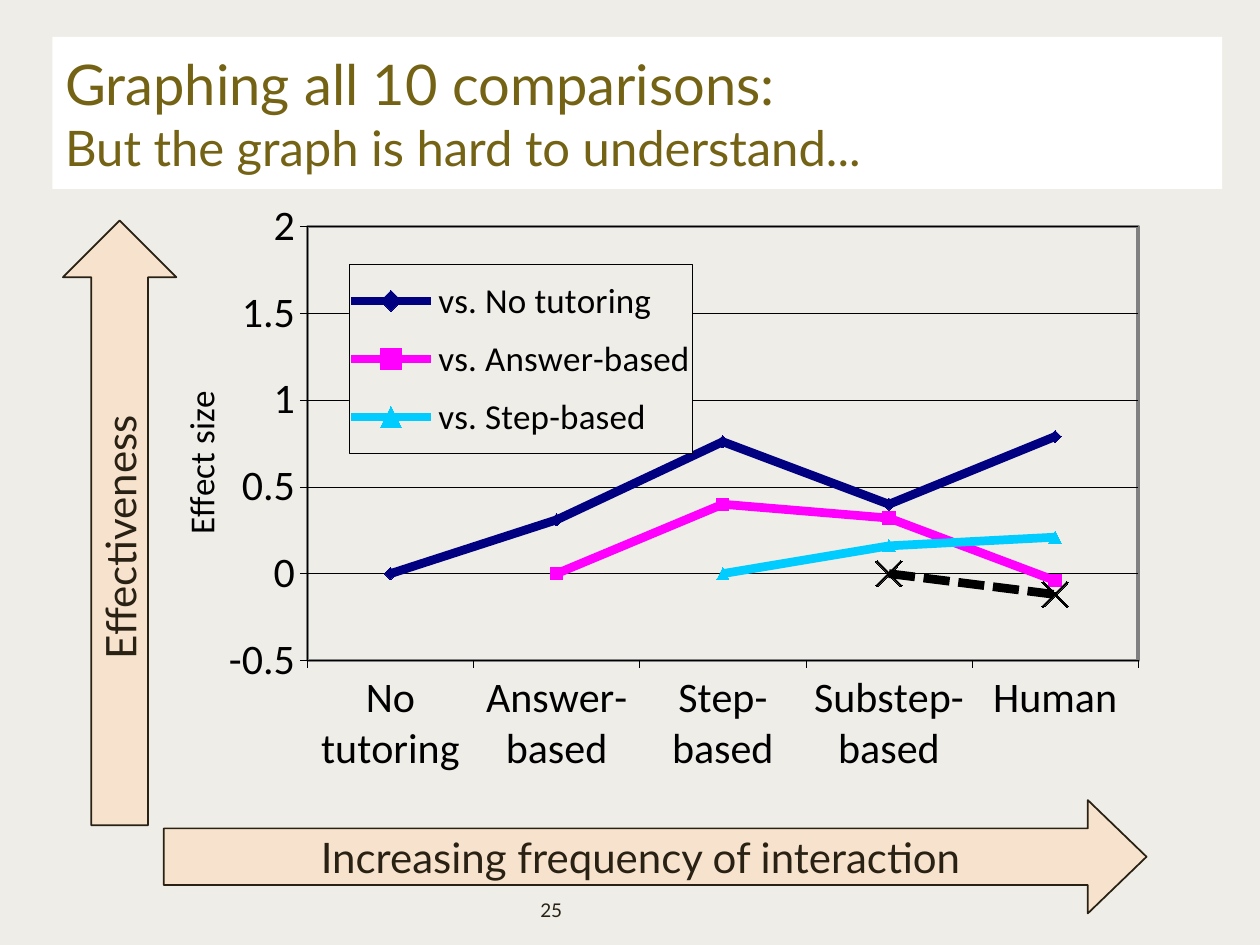
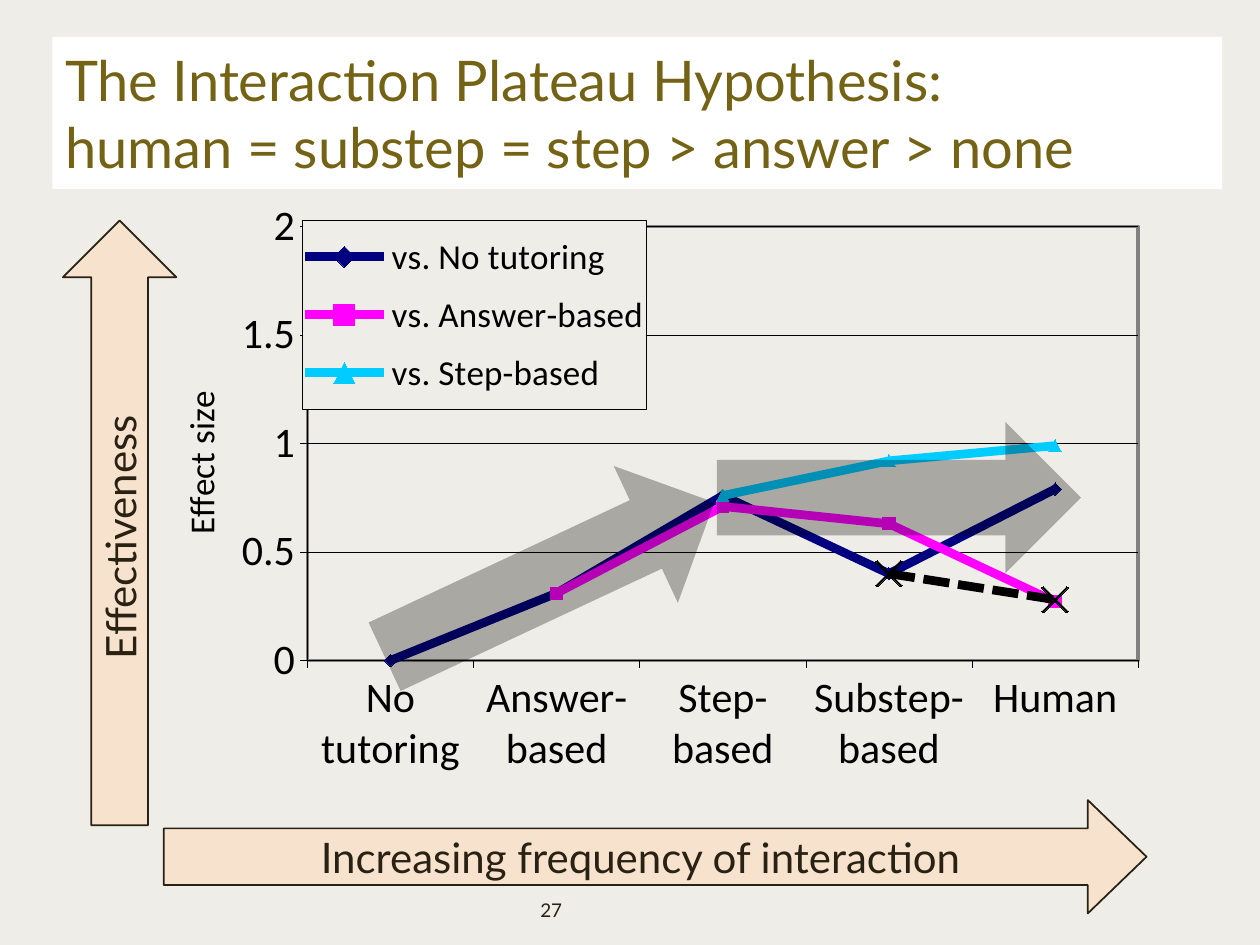
from pptx import Presentation
from pptx.chart.data import CategoryChartData
from pptx.dml.color import RGBColor
from pptx.enum.chart import (XL_AXIS_CROSSES, XL_CHART_TYPE, XL_LEGEND_POSITION,
                             XL_MARKER_STYLE, XL_TICK_LABEL_POSITION, XL_TICK_MARK)
from pptx.enum.dml import MSO_LINE
from pptx.enum.shapes import MSO_SHAPE
from pptx.enum.text import MSO_ANCHOR, MSO_AUTO_SIZE, PP_ALIGN
from pptx.oxml import parse_xml
from pptx.oxml.ns import nsdecls, qn
from pptx.util import Pt

# Shared look
BACKGROUND, WHITE, BLACK = "EFEDE7", "FFFFFF", "000000"
TITLE_COLOR, TEXT_COLOR, ARROW_FILL = "746314", "292113", "F7E3CD"
PLOT_BORDER = "808080"
SLIDE_FONT, CHART_FONT = "Lato", "Calibri"
HAIRLINE = 0.38

CATEGORIES = ["No tutoring", "Answer-based", "Step-based", "Substep-based", "Human"]
SERIES_STYLES = [
    ("vs. No tutoring", "000080", XL_MARKER_STYLE.DIAMOND),
    ("vs. Answer-based", "FF00FF", XL_MARKER_STYLE.SQUARE),
    ("vs. Step-based", "00CCFF", XL_MARKER_STYLE.TRIANGLE),
    ("vs. Substep-based", BLACK, XL_MARKER_STYLE.X),
]
RAW_EFFECTS = [
    [0, 0.31, 0.76, 0.4, 0.79],
    [None, 0, 0.4, 0.32, -0.04],
    [None, None, 0, 0.16, 0.21],
    [None, None, None, 0, -0.12],
]
STACKED_EFFECTS = [
    [0, 0.31, 0.76, 0.4, 0.79],
    [None, 0.31, 0.71, 0.63, 0.27],
    [None, None, 0.76, 0.92, 0.99],
    [None, None, None, 0.4, 0.28],
]


def color(hex_string):
    return RGBColor.from_string(hex_string)


def set_fill(fill, hex_string):
    fill.solid()
    fill.fore_color.rgb = color(hex_string)


def set_line(line, hex_string, width):
    set_fill(line.fill, hex_string)
    line.width = Pt(width)


def set_font(font, name, size, hex_string):
    font.name = name
    font.size = Pt(size)
    font.bold = False
    font.color.rgb = color(hex_string)


# Slide elements
def add_titled_slide(presentation, lines):
    """Lines are (text, size) pairs in one paragraph."""
    slide = presentation.slides.add_slide(presentation.slide_layouts[5])
    title = slide.shapes.title
    title.left, title.top, title.width, title.height = Pt(30), Pt(21), Pt(668.4), Pt(87)
    set_fill(title.fill, WHITE)
    frame = title.text_frame
    frame.auto_size = MSO_AUTO_SIZE.NONE
    frame.vertical_anchor = MSO_ANCHOR.MIDDLE
    paragraph = frame.paragraphs[0]
    paragraph.alignment = PP_ALIGN.LEFT
    title_size = lines[0][1]
    set_font(paragraph.font, SLIDE_FONT, title_size, TITLE_COLOR)
    for index, (text, size) in enumerate(lines):
        if index:
            paragraph.add_line_break()
        run = paragraph.add_run()
        run.text = text
        if size != title_size:
            run.font.size = Pt(size)
    return slide


def write_centered(frame, text, size):
    paragraph = frame.paragraphs[0]
    paragraph.text = text
    paragraph.alignment = PP_ALIGN.CENTER
    set_font(paragraph.font, SLIDE_FONT, size, TEXT_COLOR)


def add_page_number(slide, number):
    box = slide.shapes.add_textbox(Pt(126), Pt(510), Pt(378), Pt(18))
    box.text_frame.word_wrap = True
    write_centered(box.text_frame, number, 10.8)


def add_arrow(slide, left, top, width, height, rotation=0):
    arrow = slide.shapes.add_shape(MSO_SHAPE.RIGHT_ARROW, Pt(left), Pt(top),
                                   Pt(width), Pt(height))
    arrow.shadow.inherit = False
    arrow.rotation = rotation
    return arrow


def add_axis_arrow(slide, text, left, top, width, rotation=0):
    arrow = add_arrow(slide, left, top, width, 64.8, rotation)
    set_fill(arrow.fill, ARROW_FILL)
    set_line(arrow.line, TEXT_COLOR, 1)
    arrow.text_frame.word_wrap = False
    arrow.text_frame.vertical_anchor = MSO_ANCHOR.MIDDLE
    write_centered(arrow.text_frame, text, 24)
    return arrow


def add_trend_arrow(slide, left, top, rotation=0):
    arrow = add_arrow(slide, left, top, 208, 86.4, rotation)
    set_fill(arrow.fill, BLACK)
    arrow.line.fill.background()
    tint = arrow.fill._xPr.find(".//" + qn("a:srgbClr"))
    tint.append(parse_xml(f'<a:alpha {nsdecls("a")} val="29000"/>'))


# Chart parts
def place_part(part, after, **fractions):
    """Give a chart part a fixed place, in fractions of the chart."""
    old_layout = part.find(qn("c:layout"))
    if old_layout is not None:
        part.remove(old_layout)
    target = '<c:layoutTarget val="inner"/>' if after is None else ""
    modes = "".join(f'<c:{axis}Mode val="edge"/>' for axis in "xy")
    sizes = "".join(f'<c:{key} val="{value}"/>' for key, value in fractions.items())
    layout = parse_xml(f'<c:layout {nsdecls("c")}><c:manualLayout>{target}{modes}{sizes}'
                       '</c:manualLayout></c:layout>')
    if after is None:
        part.insert(0, layout)
    else:
        after.addnext(layout)


def frame_properties(fill, line, width):
    return parse_xml(
        f'<c:spPr {nsdecls("c", "a")}>{fill}<a:ln w="{Pt(width)}"><a:solidFill>'
        f'<a:srgbClr val="{line}"/></a:solidFill></a:ln></c:spPr>')


def turn_text(part, angle):
    body = part.find(".//" + qn("a:bodyPr"))
    body.set("rot", str(angle * 60000))
    body.set("vert", "horz")


def style_axis(axis):
    axis.major_tick_mark = XL_TICK_MARK.OUTSIDE
    axis.minor_tick_mark = XL_TICK_MARK.NONE
    axis.tick_label_position = XL_TICK_LABEL_POSITION.LOW
    set_font(axis.tick_labels.font, CHART_FONT, 24, BLACK)
    turn_text(axis._element.find(qn("c:txPr")), 0)
    set_line(axis.format.line, BLACK, HAIRLINE)


def style_value_axis(axis, minimum):
    style_axis(axis)
    axis.minimum_scale, axis.maximum_scale, axis.major_unit = minimum, 2, 0.5
    axis.crosses = XL_AXIS_CROSSES.MINIMUM
    axis.has_major_gridlines = True
    set_line(axis.major_gridlines.format.line, BLACK, HAIRLINE)
    paragraph = axis.axis_title.text_frame.paragraphs[0]
    paragraph.text = "Effect size"
    set_font(paragraph.font, CHART_FONT, 20, BLACK)
    title = axis.axis_title._element
    turn_text(title, -90)
    place_part(title, title.find(qn("c:tx")), x=0.018, y=0.307)


def style_series(series, hex_string, marker_style):
    series.smooth = False
    set_line(series.format.line, hex_string, 5)
    marker = series.marker
    marker.style = marker_style
    if marker_style == XL_MARKER_STYLE.X:
        series.format.line.dash_style = MSO_LINE.SQUARE_DOT
        marker.size = 15
        marker.format.fill.background()
    else:
        marker.size = 7
        set_fill(marker.format.fill, hex_string)
    set_line(marker.format.line, hex_string, 1)


def style_legend(chart, left, top):
    chart.has_legend = True
    chart.legend.position = XL_LEGEND_POSITION.RIGHT
    chart.legend.include_in_layout = False
    set_font(chart.legend.font, CHART_FONT, 20, BLACK)
    legend = chart.legend._element
    # The last series has no legend entry
    entry = parse_xml(f'<c:legendEntry {nsdecls("c")}><c:idx val="3"/>'
                      '<c:delete val="1"/></c:legendEntry>')
    legend.find(qn("c:legendPos")).addnext(entry)
    place_part(legend, entry, x=left, y=top, w=0.339, h=0.287)
    fill = f'<a:solidFill><a:srgbClr val="{BACKGROUND}"/></a:solidFill>'
    legend.find(qn("c:overlay")).addnext(frame_properties(fill, BLACK, HAIRLINE))


def add_effect_chart(slide, effects, minimum, legend_left, legend_top):
    data = CategoryChartData()
    data.categories = CATEGORIES
    for (name, *_), values in zip(SERIES_STYLES, effects):
        data.add_series(name, values)
    chart = slide.shapes.add_chart(XL_CHART_TYPE.LINE_MARKERS, Pt(86.5), Pt(104.3),
                                   Pt(579), Pt(375.8), data).chart
    chart.has_title = False
    set_font(chart.font, CHART_FONT, 20, BLACK)
    chart.plots[0].vary_by_categories = False
    style_axis(chart.category_axis)
    style_value_axis(chart.value_axis, minimum)
    for series, (_, hex_string, marker_style) in zip(chart.plots[0].series, SERIES_STYLES):
        style_series(series, hex_string, marker_style)
    style_legend(chart, legend_left, legend_top)
    plot_area = chart.element.find(".//" + qn("c:plotArea"))
    place_part(plot_area, None, x=0.154, y=0.067, w=0.82, h=0.66)
    plot_area.append(frame_properties("<a:noFill/>", PLOT_BORDER, 2))


def add_comparison_slide(presentation, lines, number, effects, minimum,
                         legend_left, legend_top):
    slide = add_titled_slide(presentation, lines)
    add_page_number(slide, number)
    add_effect_chart(slide, effects, minimum, legend_left, legend_top)
    interaction = add_axis_arrow(slide, "Increasing frequency of interaction",
                                 93.6, 457.2, 561.6)
    interaction.adjustments[1] = 0.518
    add_axis_arrow(slide, "Effectiveness", -104.4, 266.4, 345.6, 270)
    return slide


def main():
    presentation = Presentation()
    presentation.slide_width, presentation.slide_height = Pt(720), Pt(540)
    set_fill(presentation.slide_master.background.fill, BACKGROUND)

    # All comparisons, each from its own zero
    add_comparison_slide(
        presentation,
        [("Graphing all 10 comparisons:", 32),
         ("But the graph is hard to understand...", 28)],
        "25", RAW_EFFECTS, -0.5, 0.195, 0.125)

    # Comparisons stacked, with the rise and the plateau
    plateau = add_comparison_slide(
        presentation,
        [("The Interaction Plateau Hypothesis:", 32),
         ("human = substep = step > answer > none", 32)],
        "27", STACKED_EFFECTS, 0, 0.149, 0.058)
    add_trend_arrow(plateau, 210, 288, 334.9)
    add_trend_arrow(plateau, 409.7, 241.2)

    presentation.save("out.pptx")


if __name__ == "__main__":
    main()
